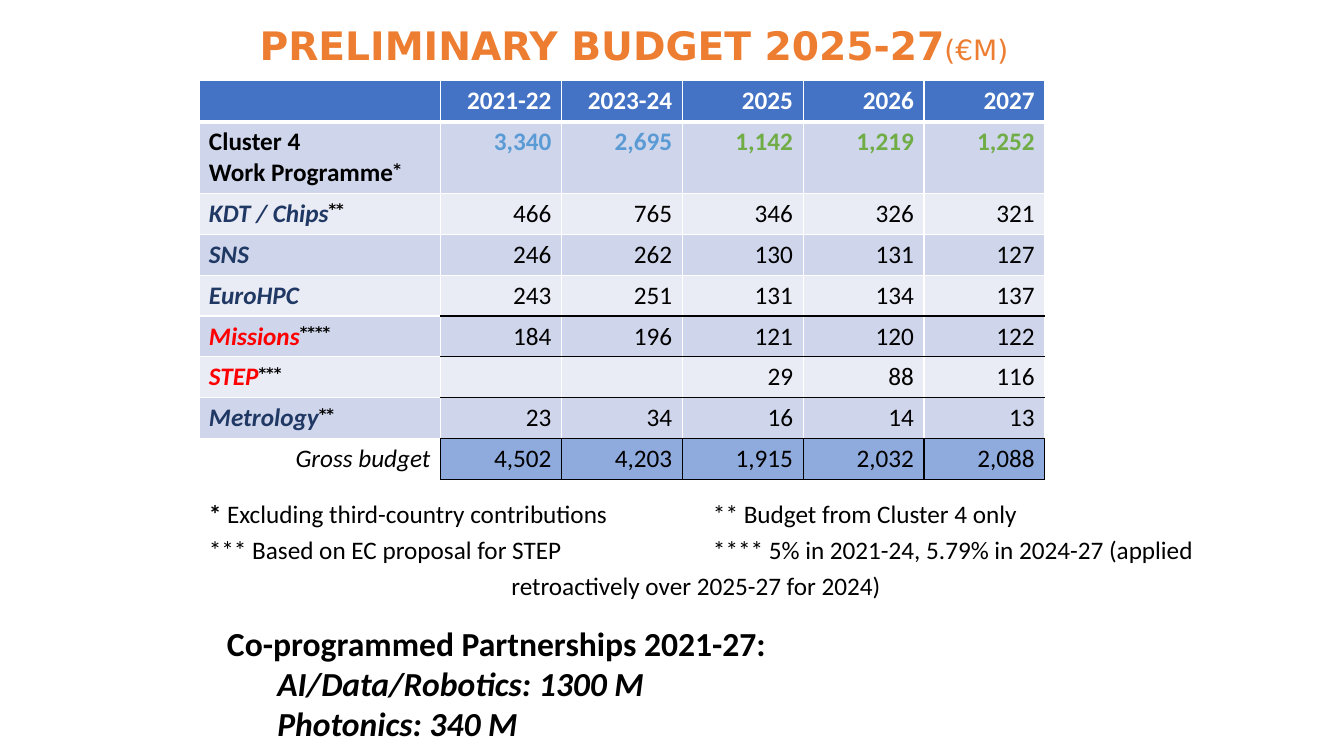
from lxml import etree
from pptx import Presentation
from pptx import util as u
from pptx.dml.color import RGBColor
from pptx.enum import text as t
from pptx.oxml import ns

WHITE = RGBColor(0xFF, 0xFF, 0xFF)
BLACK = RGBColor(0x00, 0x00, 0x00)
ORANGE = RGBColor(0xED, 0x7D, 0x31)
HEADER_BLUE = RGBColor(0x44, 0x72, 0xC4)
BAND_DARK = RGBColor(0xCF, 0xD5, 0xEA)
BAND_LIGHT = RGBColor(0xE9, 0xEB, 0xF5)
TOTAL_BLUE = RGBColor(0x8F, 0xAA, 0xDC)
PAST_BLUE = RGBColor(0x5B, 0x9B, 0xD5)
FUTURE_GREEN = RGBColor(0x70, 0xAD, 0x47)
NAVY = RGBColor(0x20, 0x38, 0x64)
RED = RGBColor(0xFF, 0x00, 0x00)

BODY, DISPLAY = "Calibri", "DejaVu Sans"
SLIDE_W, SLIDE_H = u.Inches(13.33), u.Inches(7.5)

YEARS = ["2021-22", "2023-24", "2025", "2026", "2027"]
PROGRAMMES = [
    ("Cluster 4\nWork Programme", "*", BLACK, ["3,340", "2,695", "1,142", "1,219", "1,252"]),
    ("KDT / Chips", "**", NAVY, ["466", "765", "346", "326", "321"]),
    ("SNS", "", NAVY, ["246", "262", "130", "131", "127"]),
    ("EuroHPC", "", NAVY, ["243", "251", "131", "134", "137"]),
    ("Missions", "****", RED, ["184", "196", "121", "120", "122"]),
    ("STEP", "***", RED, ["", "", "29", "88", "116"]),
    ("Metrology", "**", NAVY, ["23", "34", "16", "14", "13"]),
]
GROSS = ["4,502", "4,203", "1,915", "2,032", "2,088"]
FIRST_RULED, TOTAL_ROW = 4, len(PROGRAMMES) + 1


def share(left, top, width, height):
    return (int(SLIDE_W * left / 100), int(SLIDE_H * top / 100),
            int(SLIDE_W * width / 100), int(SLIDE_H * height / 100))


def write(paragraph, content, size=18, font=BODY, color=BLACK, bold=False,
          italic=False, raised=False, align=None):
    if align is not None:
        paragraph.alignment = align
    run = paragraph.add_run()
    run.text = content
    run.font.size = u.Pt(size)
    run.font.name = font
    run.font.color.rgb = color
    run.font.bold = bold
    run.font.italic = italic
    if raised:
        run.font._element.set("baseline", "30000")


def text_frame(slide, box):
    frame = slide.shapes.add_textbox(*box).text_frame
    frame.word_wrap = True
    frame.auto_size = t.MSO_AUTO_SIZE.SHAPE_TO_FIT_TEXT
    return frame


def style_cell(cell, fill, left=WHITE, right=WHITE, top=WHITE, bottom=WHITE, bottom_width=1):
    properties = cell._tc.get_or_add_tcPr()
    for side, color in zip("LRTB", (left, right, top, bottom)):
        width = bottom_width if side == "B" else 1
        line = etree.SubElement(properties, ns.qn(f"a:ln{side}"), w=str(u.Pt(width)))
        solid = etree.SubElement(line, ns.qn("a:solidFill"))
        etree.SubElement(solid, ns.qn("a:srgbClr"), val=str(color))
    if fill is None:
        cell.fill.background()
    else:
        cell.fill.solid()
        cell.fill.fore_color.rgb = fill


def write_value(cell, content, **style):
    if content:
        write(cell.text_frame.paragraphs[0], content, align=t.PP_ALIGN.RIGHT, **style)


def header_row(table):
    for column, year in enumerate([""] + YEARS):
        cell = table.cell(0, column)
        write_value(cell, year, color=WHITE, bold=True)
        style_cell(cell, HEADER_BLUE, bottom_width=3)


def programme_row(table, row, name, mark, color, amounts):
    band = BAND_DARK if row % 2 else BAND_LIGHT
    label = table.cell(row, 0)
    for index, part in enumerate(name.split("\n")):
        frame = label.text_frame
        line = frame.add_paragraph() if index else frame.paragraphs[0]
        write(line, part, color=color, bold=True, italic=row > 1)
    if mark:
        write(line, mark, font=DISPLAY, bold=True, raised=True)
    style_cell(label, band)

    for column, amount in enumerate(amounts, 1):
        cell = table.cell(row, column)
        main = PAST_BLUE if column < 3 else FUTURE_GREEN
        write_value(cell, amount, color=main if row == 1 else BLACK, bold=row == 1)
        style_cell(cell, band,
                   top=BLACK if row > FIRST_RULED else WHITE,
                   bottom=BLACK if row >= FIRST_RULED else WHITE)


def gross_row(table):
    label = table.cell(TOTAL_ROW, 0)
    write_value(label, "Gross budget", italic=True)
    style_cell(label, None, right=BLACK)
    for column, amount in enumerate(GROSS, 1):
        cell = table.cell(TOTAL_ROW, column)
        cell.vertical_anchor = t.MSO_ANCHOR.MIDDLE
        write_value(cell, amount)
        style_cell(cell, TOTAL_BLUE, BLACK, BLACK, BLACK, BLACK)


def budget_table(slide, box):
    width, height = box[2:]
    table = slide.shapes.add_table(TOTAL_ROW + 1, len(YEARS) + 1, *box).table
    for index, column in enumerate(table.columns):
        column.width = width * (1 if index else 2) // 7
    for index, row in enumerate(table.rows):
        row.height = int(height * (0.18 if index == 1 else 0.1025))
    header_row(table)
    for row, programme in enumerate(PROGRAMMES, 1):
        programme_row(table, row, *programme)
    gross_row(table)


def title(slide, box):
    heading = text_frame(slide, box).paragraphs[0]
    write(heading, "PRELIMINARY BUDGET 2025-27", size=28, font=DISPLAY, color=ORANGE,
          bold=True, align=t.PP_ALIGN.CENTER)
    write(heading, "(€M)", size=20, font=DISPLAY, color=ORANGE)


def footnotes(slide, box):
    frame = text_frame(slide, box)
    first, second = frame.paragraphs[0], frame.add_paragraph()
    for note in (first, second):
        note.line_spacing = 1.2
        stops = etree.SubElement(note._p.get_or_add_pPr(), ns.qn("a:tabLst"))
        for inches in (3, 5):
            etree.SubElement(stops, ns.qn("a:tab"), pos=str(u.Inches(inches)), algn="l")
    write(first, "* ", bold=True)
    write(first, "Excluding third-country contributions \t** Budget from Cluster 4 only")
    write(second, "*** Based on EC proposal for STEP \t**** 5% in 2021-24, 5.79% in 2024-27 (applied")
    second.add_line_break()
    write(second, "\tretroactively over 2025-27 for 2024)")


def partnerships(slide, box):
    frame = text_frame(slide, box)
    write(frame.paragraphs[0], "Co-programmed Partnerships 2021-27:", size=24, bold=True)
    for partnership in ("AI/Data/Robotics: 1300 M", "Photonics: 340 M"):
        item = frame.add_paragraph()
        item.level = 1
        item._p.get_or_add_pPr().set("marL", str(u.Inches(0.5)))
        write(item, partnership, size=24, bold=True, italic=True)


def main():
    deck = Presentation()
    deck.slide_width, deck.slide_height = SLIDE_W, SLIDE_H
    slide = deck.slides.add_slide(deck.slide_layouts[6])
    budget_table(slide, share(14.8, 10.7, 62.95, 52))
    title(slide, share(12.25, 2.1, 69.85, 7.6))
    footnotes(slide, share(14.8, 64.4, 75.2, 15.6))
    partnerships(slide, share(16.15, 81.7, 67.75, 17.5))
    deck.save("out.pptx")


if __name__ == "__main__":
    main()
